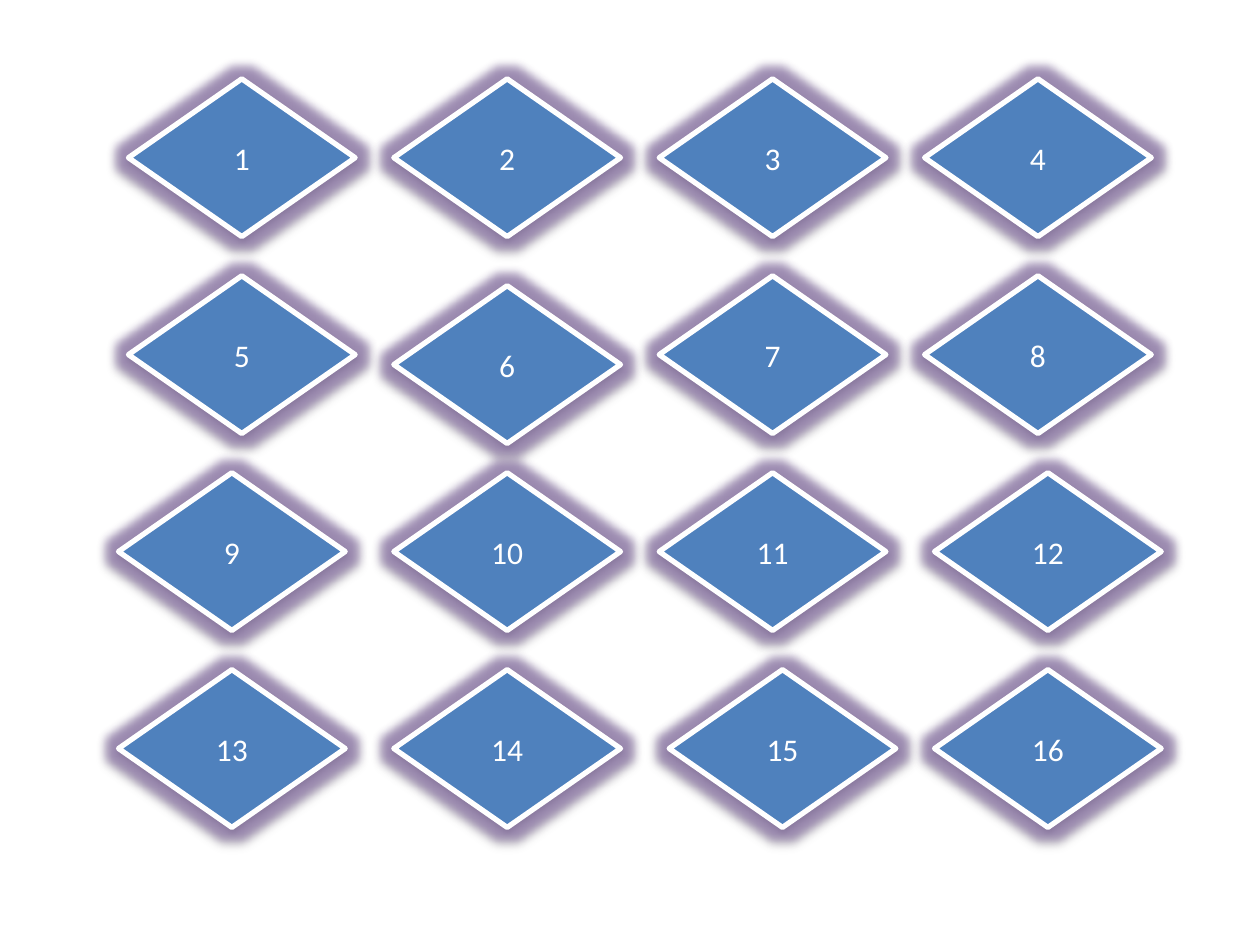
from lxml import etree
from pptx import Presentation
from pptx import util as u
from pptx.dml.color import RGBColor
from pptx.enum import shapes, text
from pptx.oxml.ns import qn

# Content: the numbers row by row, and the diamonds that sit off the grid
ROWS = [
    ["1", "2", "3", "4"],
    ["5", "6", "7", "8"],
    ["9", "10", "11", "12"],
    ["13", "14", "15", "16"],
]
NUDGES = {  # steps right, steps down
    "6": (0, 1),
    "9": (-1, 0), "13": (-1, 0),
    "12": (1, 0), "15": (1, 0), "16": (1, 0),
}

# Grid, in centimetres
LEFT, TOP = 2.59, 1.59
COLUMN_STEP, ROW_STEP = 5.35, 3.97
WIDTH, HEIGHT = 4.57, 3.18
NUDGE = 0.2

BLUE = RGBColor(0x4F, 0x81, 0xBD)
WHITE = RGBColor(0xFF, 0xFF, 0xFF)
PURPLE = RGBColor(0x80, 0x64, 0xA2)
BLACK = RGBColor(0x00, 0x00, 0x00)


def add_effect(effects, tag, color, opacity, **attributes):
    effect = etree.SubElement(effects, qn(tag), attributes)
    fill = etree.SubElement(effect, qn("a:srgbClr"), val=str(color))
    etree.SubElement(fill, qn("a:alpha"), val=str(opacity * 1000))


def add_glow_and_shadow(shape):
    shape.shadow.inherit = False
    effects = shape._element.spPr.find(qn("a:effectLst"))
    add_effect(effects, "a:glow", PURPLE, 60, rad=str(u.Pt(11)))
    add_effect(effects, "a:outerShdw", BLACK, 38, blurRad="40000",
               dist="20000", dir="5400000", rotWithShape="0")


def write_text(shape, content, *, size, color, font="Calibri"):
    frame = shape.text_frame
    frame.word_wrap = True
    frame.vertical_anchor = text.MSO_ANCHOR.MIDDLE
    paragraph = frame.paragraphs[0]
    paragraph.alignment = text.PP_ALIGN.CENTER
    run = paragraph.add_run()
    run.text = content
    run.font.name = font
    run.font.size = u.Pt(size)
    run.font.color.rgb = color


def add_diamond(slide, number, left, top):
    shape = slide.shapes.add_shape(
        shapes.MSO_SHAPE.DIAMOND,
        u.Cm(left), u.Cm(top), u.Cm(WIDTH), u.Cm(HEIGHT))
    shape.fill.solid()
    shape.fill.fore_color.rgb = BLUE
    shape.line.color.rgb = WHITE
    shape.line.width = u.Pt(3)
    add_glow_and_shadow(shape)
    write_text(shape, number, size=18, color=WHITE)


def main():
    presentation = Presentation()
    presentation.slide_width = u.Cm(25.4)
    presentation.slide_height = u.Cm(19.05)
    slide = presentation.slides.add_slide(presentation.slide_layouts[6])

    # Grid of numbered diamonds
    for row, numbers in enumerate(ROWS):
        for column, number in enumerate(numbers):
            right, down = NUDGES.get(number, (0, 0))
            add_diamond(slide, number,
                        LEFT + column * COLUMN_STEP + right * NUDGE,
                        TOP + row * ROW_STEP + down * NUDGE)

    presentation.save("out.pptx")


if __name__ == "__main__":
    main()
